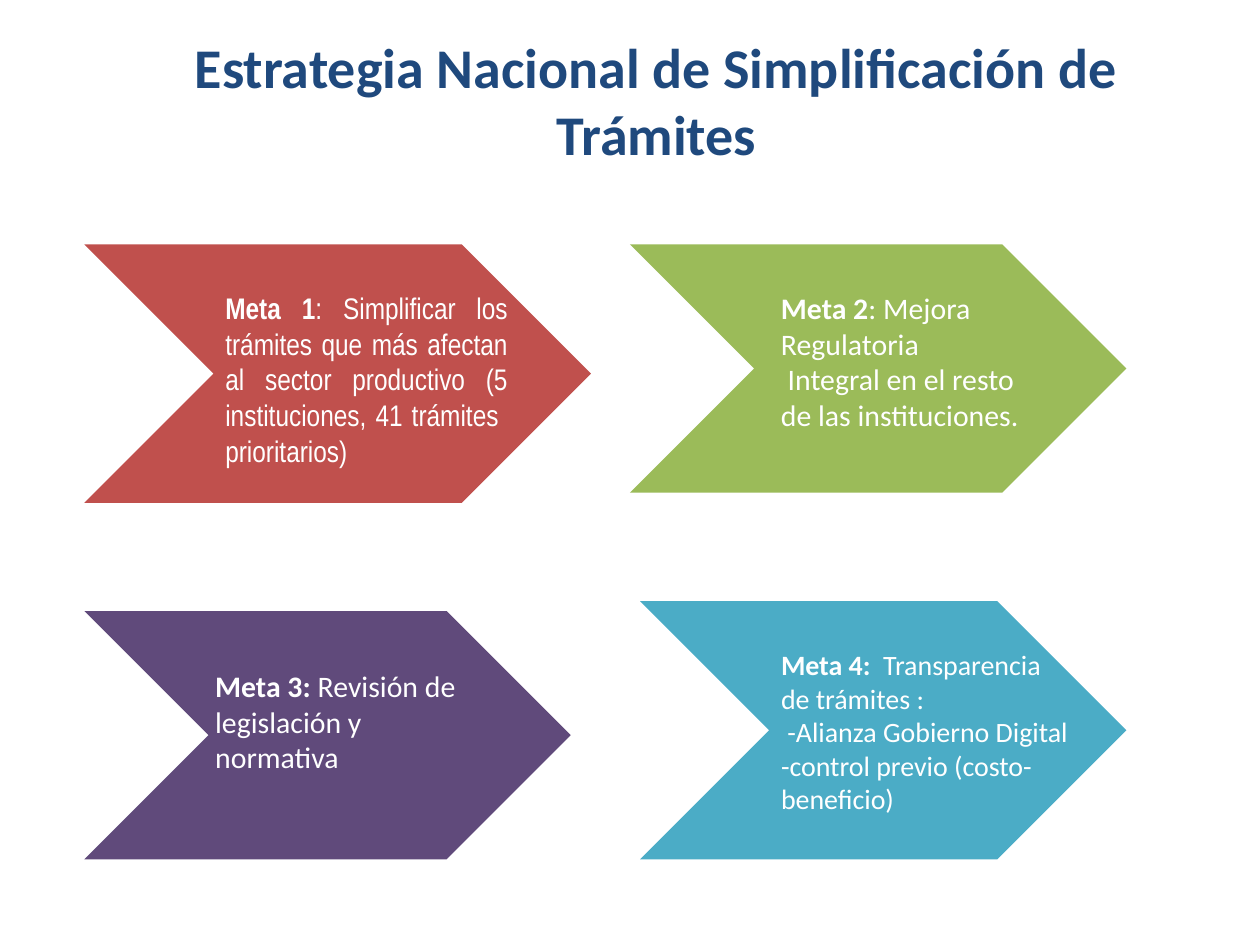
import pptx
import pptx.util
import pptx.dml.color
import pptx.enum.shapes
import pptx.enum.text

Inches, Pt = pptx.util.Inches, pptx.util.Pt
RGBColor = pptx.dml.color.RGBColor
PP_ALIGN = pptx.enum.text.PP_ALIGN
ANCHOR = pptx.enum.text.MSO_ANCHOR

NAVY = RGBColor(0x1F, 0x49, 0x7D)
WHITE = RGBColor(0xFF, 0xFF, 0xFF)
RED = RGBColor(0xC0, 0x50, 0x4D)
GREEN = RGBColor(0x9B, 0xBB, 0x59)
PURPLE = RGBColor(0x60, 0x4A, 0x7B)
TEAL = RGBColor(0x4B, 0xAC, 0xC6)


def add_run(p, text, size, font, color, bold):
    r = p.add_run()
    r.text = text
    r.font.size = Pt(size)
    r.font.name = font
    r.font.bold = bold
    r.font.color.rgb = color


prs = pptx.Presentation()
prs.slide_width, prs.slide_height = Inches(10), Inches(7.5)
s = prs.slides.add_slide(prs.slide_layouts[5])

# Title
title = s.shapes.title
title.left, title.top = Inches(0.75), Inches(0.21)
title.width, title.height = Inches(8.92), Inches(0.98)
tf = title.text_frame
tf.word_wrap = True
tf.auto_size = pptx.enum.text.MSO_AUTO_SIZE.NONE
tf.vertical_anchor = ANCHOR.TOP
p = tf.paragraphs[0]
p.alignment = PP_ALIGN.CENTER
add_run(p, "Estrategia Nacional de Simplificación de Trámites", 32, "Calibri", NAVY, True)

# Goals: chevron box, colour, text box, size, font, alignment, heading, paragraphs
goals = [
    ((0.67, 1.94, 4.02, 2.05), RED, (1.69, 2.25, 2.44, 1.53), 17, "Arial Narrow",
     PP_ALIGN.JUSTIFY, "Meta 1",
     [": Simplificar los trámites que más afectan al sector productivo "
      "(5 instituciones, 41 trámites  prioritarios)"]),
    ((5, 1.94, 3.94, 1.97), GREEN, (6.1, 2.25, 2.2, 1.25), 17, "Calibri",
     PP_ALIGN.LEFT, "Meta 2",
     [": Mejora Regulatoria", " Integral en el resto de las instituciones."]),
    ((0.67, 4.85, 3.86, 1.97), PURPLE, (1.61, 5.25, 2.2, 0.96), 17, "Calibri",
     PP_ALIGN.LEFT, "Meta 3: ",
     ["Revisión de legislación y normativa"]),
    ((5.08, 4.77, 3.86, 2.05), TEAL, (6.1, 5.09, 2.52, 1.45), 16, "Calibri",
     PP_ALIGN.LEFT, "Meta 4:",
     ["  Transparencia de trámites :", " -Alianza Gobierno Digital",
      "-control previo (costo-beneficio)"]),
]

for chevron_box, color, text_box, size, font, align, heading, lines in goals:
    # Chevron
    sp = s.shapes.add_shape(pptx.enum.shapes.MSO_SHAPE.CHEVRON,
                            *[Inches(v) for v in chevron_box])
    sp.shadow.inherit = False
    sp.fill.solid()
    sp.fill.fore_color.rgb = color
    sp.line.fill.background()

    # Goal text
    tf = s.shapes.add_textbox(*[Inches(v) for v in text_box]).text_frame
    tf.word_wrap = True
    tf.auto_size = pptx.enum.text.MSO_AUTO_SIZE.SHAPE_TO_FIT_TEXT
    for i, line in enumerate(lines):
        p = tf.add_paragraph() if i else tf.paragraphs[0]
        p.alignment = align
        if i == 0:
            add_run(p, heading, size, font, WHITE, True)
        add_run(p, line, size, font, WHITE, False)

prs.save("out.pptx")
